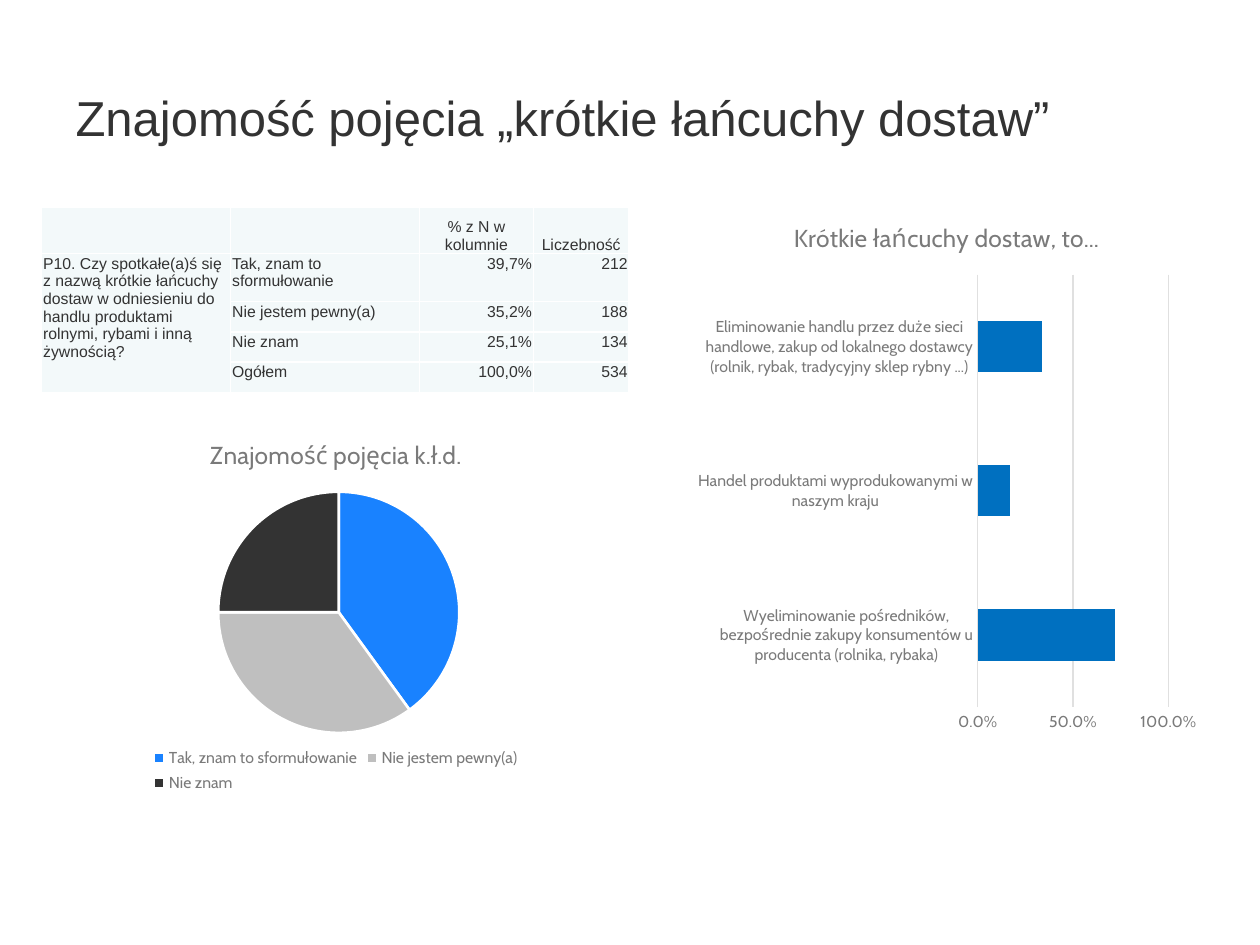
"""Build a survey slide with a results table, a pie chart and a bar chart."""
from dataclasses import dataclass
from typing import Any

from lxml import etree
from pptx import Presentation
from pptx import util as u
from pptx.chart.data import CategoryChartData
from pptx.dml.color import RGBColor
from pptx.enum import chart as charts, text
from pptx.oxml import parse_xml
from pptx.oxml.ns import nsdecls, qn

COLORS = {
    "text": "333333", "muted": "7A7A7A", "cell": "F3F9FA", "white": "FFFFFF",
    "grid": "E0E0E0", "bar": "0070C0", "blue": "1982FF", "gray": "BFBFBF",
}
LEFT, CENTER, RIGHT = text.PP_ALIGN.LEFT, text.PP_ALIGN.CENTER, text.PP_ALIGN.RIGHT
COLUMN_WIDTHS = (3.81, 3.81, 2.29, 1.93)
ROW_HEIGHTS = (0.94, 0.97, 0.61, 0.61, 0.61)
ANSWERS = ("Tak, znam to sformułowanie", "Nie jestem pewny(a)", "Nie znam")
QUESTION = ("P10. Czy spotkałe(a)ś się z nazwą krótkie łańcuchy dostaw w odniesieniu "
            "do handlu produktami rolnymi, rybami i inną żywnością?")
ROWS = (
    ("", "", "% z N w kolumnie", "Liczebność"),
    (QUESTION, ANSWERS[0], "39,7%", "212"),
    ("", ANSWERS[1], "35,2%", "188"),
    ("", ANSWERS[2], "25,1%", "134"),
    ("", "Ogółem", "100,0%", "534"),
)


@dataclass
class Box:
    left: float
    top: float
    width: float
    height: float

    def lengths(self) -> list:
        return [u.Cm(value) for value in (self.left, self.top, self.width, self.height)]


@dataclass
class ChartSpec:
    kind: Any
    title: str
    box: Box
    plot: tuple[float, float, float, float]
    categories: tuple[str, ...]
    values: tuple[float, ...]
    number_format: str


PIE = ChartSpec(
    charts.XL_CHART_TYPE.PIE, "Znajomość pojęcia k.ł.d.", Box(0.84, 8.46, 11.86, 7.62),
    (0.3, 0.17, 0.41, 0.68), ANSWERS, (40, 35, 25), "General")
BARS = ChartSpec(
    charts.XL_CHART_TYPE.BAR_CLUSTERED, "Krótkie łańcuchy dostaw, to...",
    Box(13.89, 4.01, 10.39, 10.9), (0.56, 0.14, 0.37, 0.8),
    ("Wyeliminowanie pośredników, bezpośrednie zakupy konsumentów u producenta (rolnika, rybaka)",
     "Handel produktami wyprodukowanymi w naszym kraju",
     "Eliminowanie handlu przez duże sieci handlowe, zakup od lokalnego dostawcy "
     "(rolnik, rybak, tradycyjny sklep rybny ...)"),
    (0.72, 0.17, 0.34), "###0.0%")


def apply(target: Any, **values: Any) -> None:
    for name, value in values.items():
        setattr(target, name, value)


def format_font(font: Any, name: str, size: float, color: str) -> None:
    apply(font, name=name, size=u.Pt(size), bold=False)
    font.color.rgb = RGBColor.from_string(COLORS[color])


def fill_solid(fill: Any, color: str) -> None:
    fill.solid()
    fill.fore_color.rgb = RGBColor.from_string(COLORS[color])


def format_line(line: Any, color: str, width: float) -> None:
    line.color.rgb = RGBColor.from_string(COLORS[color])
    line.width = u.Pt(width)


def add_title(slide: Any, words: str, box: Box) -> None:
    title = slide.shapes.title
    apply(title, **dict(zip(("left", "top", "width", "height"), box.lengths())))
    frame = title.text_frame
    apply(frame, text=words, word_wrap=True, vertical_anchor=text.MSO_ANCHOR.MIDDLE)
    paragraph = frame.paragraphs[0]
    paragraph.alignment = LEFT
    format_font(paragraph.font, "Arial", 28, "text")


def add_borders(cell: Any) -> None:
    properties = cell._tc.get_or_add_tcPr()
    for index, side in enumerate(("lnL", "lnR", "lnT", "lnB")):
        properties.insert(index, parse_xml(
            f'<a:{side} {nsdecls("a")} w="12700"><a:solidFill>'
            f'<a:srgbClr val="{COLORS["white"]}"/></a:solidFill></a:{side}>'))


def add_table(slide: Any, box: Box) -> None:
    table = slide.shapes.add_table(len(ROWS), len(COLUMN_WIDTHS), *box.lengths()).table
    apply(table, first_row=False, horz_banding=False)
    for column, width in zip(table.columns, COLUMN_WIDTHS):
        column.width = u.Cm(width)
    for row, height in zip(table.rows, ROW_HEIGHTS):
        row.height = u.Cm(height)
    margin = u.Cm(0.03)
    for row_index, row in enumerate(ROWS):
        for column_index, words in enumerate(row):
            cell = table.cell(row_index, column_index)
            header = row_index == 0
            apply(cell, text=words, margin_left=margin, margin_right=margin,
                  margin_top=margin, margin_bottom=0,
                  vertical_anchor=text.MSO_ANCHOR.BOTTOM if header else text.MSO_ANCHOR.TOP)
            paragraph = cell.text_frame.paragraphs[0]
            paragraph.alignment = LEFT if column_index < 2 else CENTER if header else RIGHT
            format_font(paragraph.font, "Arial", 9, "text")
            fill_solid(cell.fill, "cell")
            add_borders(cell)
    table.cell(1, 0).merge(table.cell(4, 0))


def place_plot(chart: Any, plot: tuple[float, float, float, float]) -> None:
    area = chart._chartSpace.chart.plotArea
    for old in area.findall(qn("c:layout")):
        area.remove(old)
    layout = etree.Element(qn("c:layout"))
    manual = etree.SubElement(layout, qn("c:manualLayout"))
    settings = [("layoutTarget", "inner"), ("xMode", "edge"), ("yMode", "edge")]
    for tag, value in settings + list(zip("xywh", plot)):
        etree.SubElement(manual, qn(f"c:{tag}")).set("val", str(value))
    area.insert(0, layout)


def add_chart(slide: Any, spec: ChartSpec) -> Any:
    data = CategoryChartData(number_format=spec.number_format)
    data.categories = spec.categories
    data.add_series("Series 1", spec.values)
    chart = slide.shapes.add_chart(spec.kind, *spec.box.lengths(), data).chart
    format_font(chart.font, "Cabin", 10, "text")
    apply(chart, has_title=True, has_legend=False)
    chart.chart_title.include_in_layout = False
    frame = chart.chart_title.text_frame
    frame.text = spec.title
    format_font(frame.paragraphs[0].runs[0].font, "Cabin", 14, "muted")
    place_plot(chart, spec.plot)
    return chart


def add_pie(slide: Any) -> None:
    chart = add_chart(slide, PIE)
    chart.has_legend = True
    apply(chart.legend, position=charts.XL_LEGEND_POSITION.BOTTOM, include_in_layout=False)
    format_font(chart.legend.font, "Cabin", 9, "muted")
    for index, color in enumerate(("blue", "gray", "text")):
        point = chart.plots[0].series[0].points[index].format
        fill_solid(point.fill, color)
        format_line(point.line, "white", 1.5)


def add_bars(slide: Any) -> None:
    chart = add_chart(slide, BARS)
    apply(chart.plots[0], gap_width=182, vary_by_categories=False)
    fill_solid(chart.plots[0].series[0].format.fill, "bar")
    for axis in (chart.category_axis, chart.value_axis):
        apply(axis, major_tick_mark=charts.XL_TICK_MARK.NONE,
              minor_tick_mark=charts.XL_TICK_MARK.NONE)
        format_font(axis.tick_labels.font, "Cabin", 9, "muted")
    format_line(chart.category_axis.format.line, "grid", 0.75)
    values = chart.value_axis
    apply(values, minimum_scale=0, maximum_scale=1, major_unit=0.5, has_major_gridlines=True)
    apply(values.tick_labels, number_format=BARS.number_format, number_format_is_linked=False)
    format_line(values.major_gridlines.format.line, "grid", 0.75)
    values.format.line.fill.background()


def main() -> None:
    presentation = Presentation()
    apply(presentation, slide_width=u.Cm(25.4), slide_height=u.Cm(19.05))
    slide = presentation.slides.add_slide(presentation.slide_layouts[5])
    add_title(slide, "Znajomość pojęcia „krótkie łańcuchy dostaw”", Box(1.27, 0.76, 22.86, 3.18))
    add_table(slide, Box(0.84, 4.17, sum(COLUMN_WIDTHS), sum(ROW_HEIGHTS)))
    add_pie(slide)
    add_bars(slide)
    presentation.save("out.pptx")


if __name__ == "__main__":
    main()
